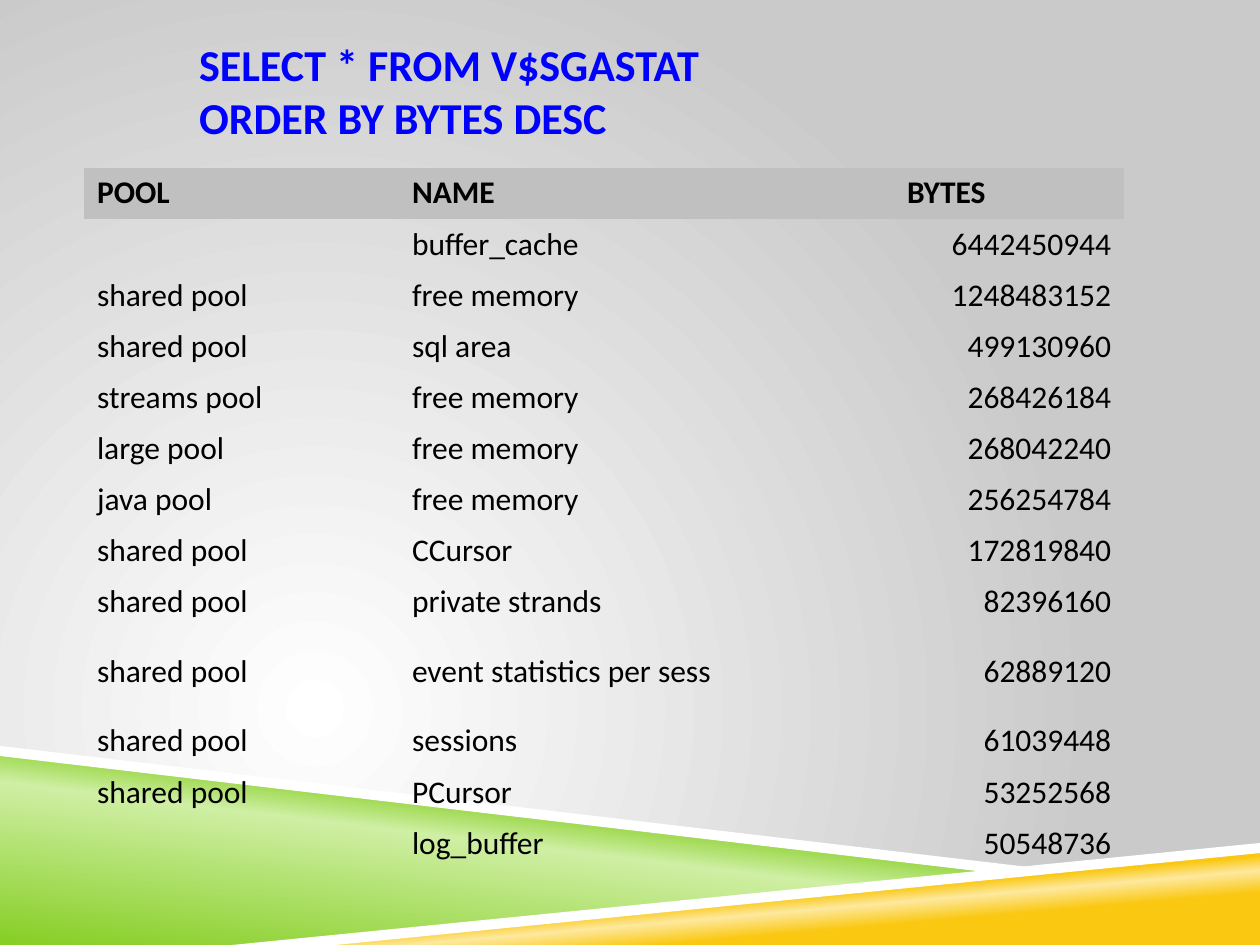
from lxml import etree
from pptx import Presentation
from pptx.dml.color import RGBColor
from pptx.enum.text import MSO_ANCHOR, MSO_AUTO_SIZE, PP_ALIGN
from pptx.oxml import parse_xml
from pptx.oxml.ns import nsdecls, qn
from pptx.util import Inches, Pt

MIDDLE = MSO_ANCHOR.MIDDLE
NO_AUTOFIT = MSO_AUTO_SIZE.NONE
LEFT, RIGHT = PP_ALIGN.LEFT, PP_ALIGN.RIGHT
FONT = "Calibri"
NO_STYLE_NO_GRID = "{2D5ABB26-0587-4C30-8999-92F81FD0307C}"
COLORS = {
    "white": "FFFFFF", "backdrop": "CACACA", "green": "86CE24",
    "pale_green": "CFEFA4", "gold": "FAC810", "pale_gold": "FDE99F",
    "title": "0000FF", "text": "000000", "header": "C0C0C0",
}


def set_gradient(fill, element, stops, direction):
    fill.gradient()
    gradient = element.find(".//" + qn("a:gradFill"))
    stop_xml = "".join(
        f'<a:gs pos="{percent * 1000}"><a:srgbClr val="{COLORS[color]}"/></a:gs>'
        for percent, color in stops)
    gradient.getparent().replace(gradient, parse_xml(
        f'<a:gradFill {nsdecls("a")} rotWithShape="1">'
        f'<a:gsLst>{stop_xml}</a:gsLst>{direction}</a:gradFill>'))


def add_band(slide, points):
    corners = [(Inches(x), Inches(y)) for x, y in points]
    builder = slide.shapes.build_freeform(*corners[0])
    builder.add_line_segments(corners[1:], close=True)
    band = builder.convert_to_shape()
    band.shadow.inherit = False
    band.line.fill.background()
    return band


prs = Presentation()
prs.slide_width, prs.slide_height = Inches(10), Inches(7.5)
slide = prs.slides.add_slide(prs.slide_layouts[5])

set_gradient(slide.background.fill, slide.element,
             [(0, "white"), (100, "backdrop")],
             '<a:path path="circle">'
             '<a:fillToRect l="50000" t="100000" r="100000" b="50000"/></a:path>')

gradient_bands = [
    ([(0, 5.97), (7.92, 6.92), (2, 7.5), (0, 7.5)],
     [(0, "green"), (52, "pale_green"), (66, "green")], 277),
    ([(1.98, 7.5), (10, 6.72), (10, 7.5)],
     [(28, "gold"), (40, "pale_gold"), (48, "gold")], 265),
]
for points, stops, angle in gradient_bands:
    band = add_band(slide, points)
    set_gradient(band.fill, band.element, stops,
                 f'<a:lin ang="{angle * 60000}" scaled="0"/>')

white_stripes = [
    [(0, 5.92), (0, 6), (7.9, 6.93), (8.32, 6.9)],
    [(10, 6.69), (1.84, 7.5), (2.66, 7.5), (10, 6.77)],
]
for points in white_stripes:
    stripe = add_band(slide, points)
    stripe.fill.solid()
    stripe.fill.fore_color.rgb = RGBColor.from_string(COLORS["white"])

title = slide.shapes.title
title.left, title.top = Inches(1.58), Inches(0.33)
title.width, title.height = Inches(5.83), Inches(0.78)
title_frame = title.text_frame
title_frame.auto_size = NO_AUTOFIT
title_frame.word_wrap = True
title_frame.vertical_anchor = MIDDLE
title_frame.margin_left = title_frame.margin_right = 0
query = title_frame.paragraphs[0]
query.text = "SELECT * FROM V$SGASTAT\nORDER BY BYTES DESC"
query.alignment = LEFT
query.font.name, query.font.size, query.font.bold = FONT, Pt(25.2), True
query.font.color.rgb = RGBColor.from_string(COLORS["title"])

memory_rows = [
    ("POOL", "NAME", "BYTES"),
    ("", "buffer_cache", "6442450944"),
    ("shared pool", "free memory", "1248483152"),
    ("shared pool", "sql area", "499130960"),
    ("streams pool", "free memory", "268426184"),
    ("large pool", "free memory", "268042240"),
    ("java pool", "free memory", "256254784"),
    ("shared pool", "CCursor", "172819840"),
    ("shared pool", "private strands", "82396160"),
    ("shared pool", "event statistics per sess", "62889120"),
    ("shared pool", "sessions", "61039448"),
    ("shared pool", "PCursor", "53252568"),
    ("", "log_buffer", "50548736"),
]
column_widths = [2.5, 2.92, 2.83]
table_frame = slide.shapes.add_table(
    len(memory_rows), len(column_widths),
    Inches(0.67), Inches(1.33), Inches(8.25), Inches(5.51))
memory_table = table_frame.table
memory_table.horz_banding = False
table_frame.element.find(".//" + qn("a:tableStyleId")).text = NO_STYLE_NO_GRID
for column, width in zip(memory_table.columns, column_widths):
    column.width = Inches(width)

for row_index, values in enumerate(memory_rows):
    is_header = row_index == 0
    is_tall = values[1] == "event statistics per sess"
    memory_table.rows[row_index].height = Inches(0.7 if is_tall else 0.4)
    for column_index, value in enumerate(values):
        cell = memory_table.cell(row_index, column_index)
        cell.vertical_anchor = MIDDLE
        if is_header:
            cell.fill.solid()
            cell.fill.fore_color.rgb = RGBColor.from_string(COLORS["header"])
        else:
            cell.fill.background()
        entry = cell.text_frame.paragraphs[0]
        entry.text = value
        entry.alignment = RIGHT if column_index == 2 and not is_header else LEFT
        entry.font.name, entry.font.size, entry.font.bold = FONT, Pt(18), is_header
        entry.font.color.rgb = RGBColor.from_string(COLORS["text"])
memory_table.cell(0, 2).margin_left = Inches(1.11)

prs.save("out.pptx")
